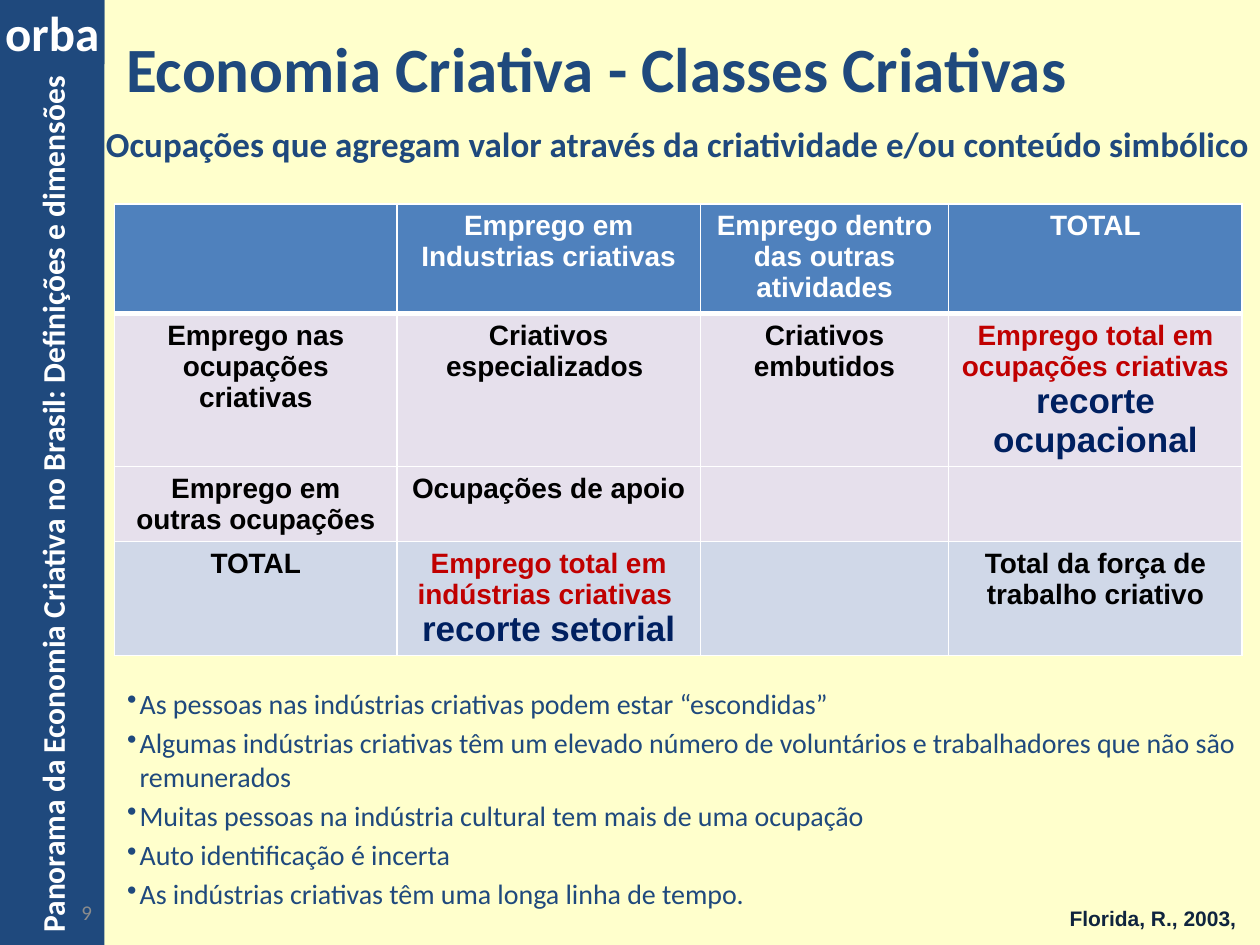
from lxml import etree
from pptx import Presentation
from pptx import util as u
from pptx.dml.color import RGBColor
from pptx.enum import shapes, text
from pptx.oxml.ns import qn

NAVY, WHITE, BLACK, RED, INK = "1F497D", "FFFFFF", "000000", "C00000", "002060"
HEAD, LILAC, PALE = "4F81BD", "E6E0EC", "D0D8E8"
MIDDLE, TOP = text.MSO_ANCHOR.MIDDLE, text.MSO_ANCHOR.TOP
LEFT, CENTER, RIGHT = text.PP_ALIGN.LEFT, text.PP_ALIGN.CENTER, text.PP_ALIGN.RIGHT

COLS = [2.24, 2.41, 1.97, 2.33]
ROWS = [0.87, 1.07, 0.56, 0.7]
FILLS = [HEAD, LILAC, LILAC, PALE]
CELLS = [
    ["", "Emprego em Industrias criativas", "Emprego dentro das outras atividades", "TOTAL"],
    ["Emprego nas ocupações criativas", "Criativos especializados ", "Criativos embutidos",
     ("Emprego total em ocupações criativas ", "recorte ocupacional")],
    ["Emprego em outras ocupações", "Ocupações de apoio", "", ""],
    ["TOTAL", ("Emprego total em indústrias criativas  ", "recorte setorial"), "",
     "Total da força de trabalho criativo"],
]
NOTES = [
    "As pessoas nas indústrias criativas podem estar “escondidas”",
    "Algumas indústrias criativas têm um elevado número de voluntários e trabalhadores "
    "que não são remunerados",
    "Muitas pessoas na indústria cultural tem mais de uma ocupação",
    "Auto identificação é incerta",
    "As indústrias criativas têm uma longa linha de tempo.",
]


def rgb(value):
    return RGBColor.from_string(value)


def box(*lengths):
    return [u.Inches(n) for n in lengths]


def add_run(p, words, size, color, bold=True, font="Calibri"):
    r = p.add_run()
    r.text = words
    r.font.size = u.Pt(size)
    r.font.name = font
    r.font.bold = bold
    r.font.color.rgb = rgb(color)


def setup_frame(sp, anchor, align, wrap=True):
    tf = sp.text_frame
    tf.auto_size = text.MSO_AUTO_SIZE.NONE
    tf.word_wrap = wrap
    tf.vertical_anchor = anchor
    tf.paragraphs[0].alignment = align
    return tf


def set_bullet(p, char=None, indent=0):
    pPr = p._p.get_or_add_pPr()
    pPr.set("marL", str(u.Inches(indent)))
    pPr.set("indent", str(-u.Inches(indent)))
    bu = etree.SubElement(pPr, qn("a:buChar" if char else "a:buNone"))
    if char:
        bu.set("char", char)


def set_borders(cell, bottom):
    tcPr = cell._tc.get_or_add_tcPr()
    for i, (side, width) in enumerate([("L", 1), ("R", 1), ("T", 1), ("B", bottom)]):
        ln = etree.Element(qn(f"a:ln{side}"), w=str(u.Pt(width)))
        fill = etree.SubElement(ln, qn("a:solidFill"))
        etree.SubElement(fill, qn("a:srgbClr"), val=WHITE)
        tcPr.insert(i, ln)


def add_panel(s, area, words, size, align, wrap=True, rotation=0):
    sp = s.shapes.add_shape(shapes.MSO_SHAPE.RECTANGLE, *area)
    sp.rotation = rotation
    sp.shadow.inherit = False
    sp.fill.solid()
    sp.fill.fore_color.rgb = rgb(NAVY)
    sp.line.fill.background()
    tf = setup_frame(sp, MIDDLE, align, wrap)
    add_run(tf.paragraphs[0], words, size, WHITE)


def add_sidebar(s, width, height):
    offset = (height - width) / 2
    add_panel(s, box(-offset, offset, height, width),
              "Panorama da Economia Criativa no Brasil: Definições e dimensões",
              18, LEFT, rotation=270)
    add_panel(s, box(0, 0, width, 0.51), "orba", 28, CENTER, wrap=False)


def fill_placeholder(sp, area, words, size, anchor):
    sp.left, sp.top, sp.width, sp.height = area
    p = setup_frame(sp, anchor, LEFT).paragraphs[0]
    add_run(p, words, size, NAVY)
    return p


def add_heading(s):
    fill_placeholder(s.shapes.title, box(0.9, 0, 8.82, 1.07),
                     "Economia Criativa - Classes Criativas", 36, MIDDLE)
    p = fill_placeholder(
        s.placeholders[1], box(0.74, 0.92, 9.37, 0.94),
        "Ocupações que agregam valor através da criatividade e/ou conteúdo simbólico", 20, TOP)
    p.space_before = u.Pt(4)
    set_bullet(p)


def fill_cell(cell, content, color):
    p = cell.text_frame.paragraphs[0]
    p.alignment = CENTER
    if isinstance(content, tuple):
        total, cut = content
        add_run(p, total, 16, RED, font="Arial")
        add_run(p, cut, 20, INK, font="Arial")
    elif content:
        add_run(p, content, 16, color, font="Arial")


def add_matrix(s, area):
    frame = s.shapes.add_table(len(ROWS), len(COLS), *area)
    table = frame.table
    for column, width in zip(table.columns, COLS):
        column.width = u.Inches(width)
    for i, height in enumerate(ROWS):
        table.rows[i].height = u.Inches(height)
        for j, content in enumerate(CELLS[i]):
            cell = table.cell(i, j)
            cell.fill.solid()
            cell.fill.fore_color.rgb = rgb(FILLS[i])
            set_borders(cell, 1 if i else 3)
            fill_cell(cell, content, BLACK if i else WHITE)
    frame.height = area[3]


def add_notes(s, area):
    tf = setup_frame(s.shapes.add_textbox(*area), TOP, LEFT)
    for i, words in enumerate(NOTES):
        p = tf.add_paragraph() if i else tf.paragraphs[0]
        p.space_before = u.Pt(3.2)
        set_bullet(p, "•", 0.1)
        add_run(p, words, 16, NAVY, bold=False)


def add_footer(s):
    number = setup_frame(s.shapes.add_textbox(*box(0, 6.98, 0.83, 0.52)), MIDDLE, RIGHT)
    add_run(number.paragraphs[0], "9", 12, "8C8C8C", bold=False)
    credit = setup_frame(s.shapes.add_textbox(*box(8.39, 7.14, 1.54, 0.3)), TOP, LEFT, False)
    credit.auto_size = text.MSO_AUTO_SIZE.SHAPE_TO_FIT_TEXT
    add_run(credit.paragraphs[0], "Florida, R., 2003,", 12, "0F243E", font="Arial")


def main():
    prs = Presentation()
    prs.slide_width, prs.slide_height = box(10, 7.5)
    s = prs.slides.add_slide(prs.slide_layouts[1])
    s.background.fill.solid()
    s.background.fill.fore_color.rgb = rgb("FFFFCC")
    add_sidebar(s, 0.83, 7.5)
    add_heading(s)
    add_matrix(s, box(0.91, 1.62, 8.95, 3.8))
    add_notes(s, box(0.91, 5.4, 9.25, 0.94))
    add_footer(s)
    prs.save("out.pptx")


if __name__ == "__main__":
    main()
